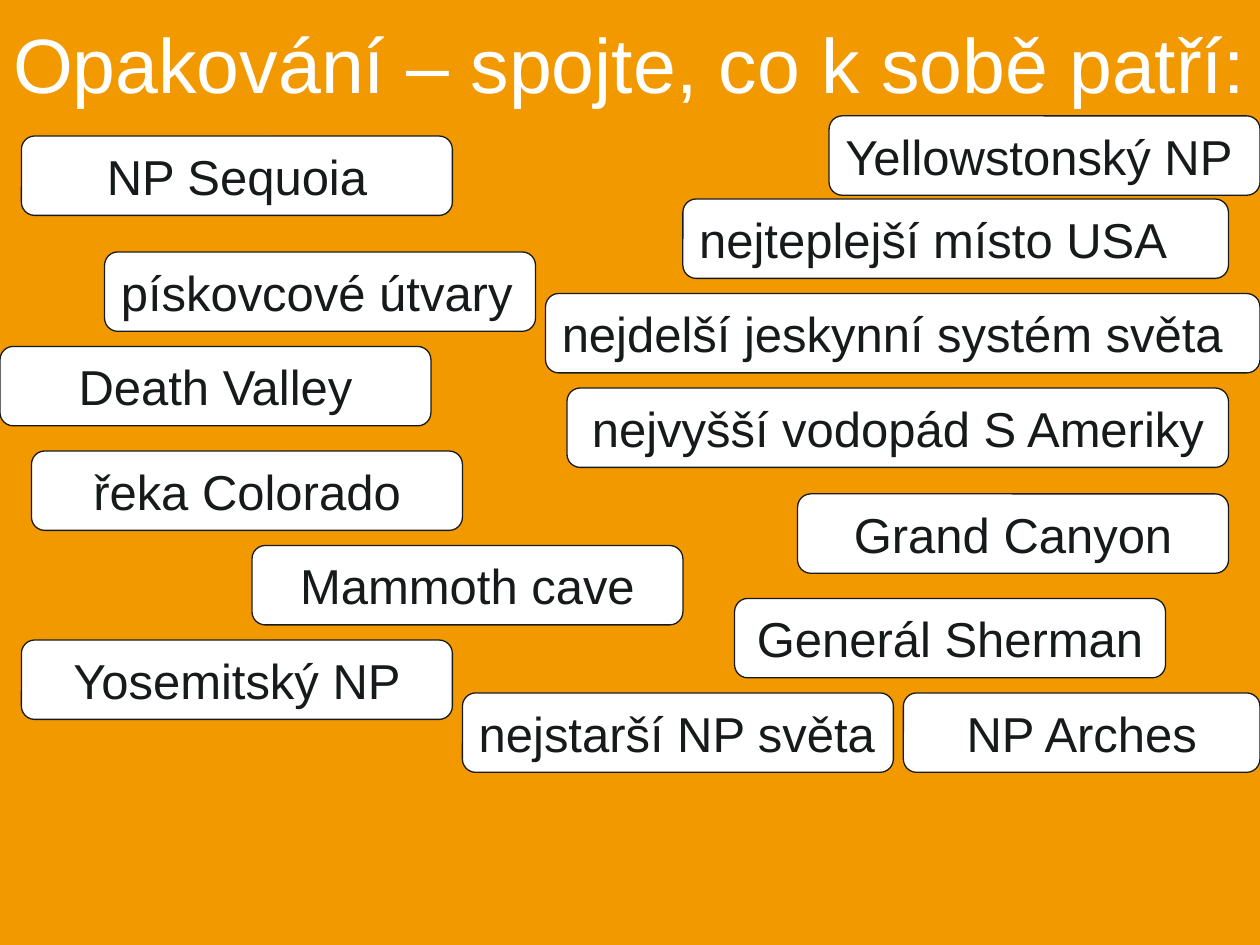
"""Build the matching review slide on national parks of the USA."""
from dataclasses import dataclass

from pptx import Presentation
from pptx.dml.color import RGBColor
from pptx.enum.shapes import MSO_SHAPE
from pptx.enum.text import MSO_ANCHOR, MSO_AUTO_SIZE, PP_ALIGN
from pptx.util import Inches, Pt

LEFT, CENTER = PP_ALIGN.LEFT, PP_ALIGN.CENTER
MIDDLE = MSO_ANCHOR.MIDDLE
GROW, FIXED = MSO_AUTO_SIZE.SHAPE_TO_FIT_TEXT, MSO_AUTO_SIZE.NONE
ROUNDED = MSO_SHAPE.ROUNDED_RECTANGLE


@dataclass(frozen=True)
class Theme:
    """Colours, font and type sizes of the slide."""
    back: RGBColor = RGBColor(0xF3, 0x99, 0x00)
    paper: RGBColor = RGBColor(0xFF, 0xFF, 0xFF)
    ink: RGBColor = RGBColor(0x17, 0x1A, 0x1B)
    font: str = "Arial"
    head: int = 44
    label: int = 28
    line: float = 0.75


def put_text(frame, text, *, font, size, color, align=CENTER, fit=FIXED):
    """Write one formatted paragraph into a text frame."""
    frame.word_wrap = True
    frame.auto_size = fit
    frame.vertical_anchor = MIDDLE
    par = frame.paragraphs[0]
    par.alignment = align
    run = par.add_run()
    run.text = text
    run.font.name = font
    run.font.size = Pt(size)
    run.font.color.rgb = color


class Board:
    """Hold the theme and the current slide."""

    def __init__(self, deck, theme):
        """Add a title-only slide with a plain background."""
        self.theme = theme
        self.slide = deck.slides.add_slide(deck.slide_layouts[5])
        fill = self.slide.background.fill
        fill.solid()
        fill.fore_color.rgb = theme.back

    def title(self, text, width, height):
        """Fill the title placeholder along the top edge."""
        box = self.slide.shapes.title
        box.left, box.top = Inches(0), Inches(0)
        box.width, box.height = Inches(width), Inches(height)
        put_text(box.text_frame, text, font=self.theme.font,
                 size=self.theme.head, color=self.theme.paper)

    def card(self, text, left, top, width=3.42, align=CENTER):
        """Add a rounded card with one term."""
        look = self.theme
        box = self.slide.shapes.add_shape(
            ROUNDED, Inches(left), Inches(top), Inches(width), Inches(0.63))
        box.shadow.inherit = False
        box.fill.solid()
        box.fill.fore_color.rgb = look.paper
        box.line.color.rgb = look.ink
        box.line.width = Pt(look.line)
        put_text(box.text_frame, text, font=look.font, size=look.label,
                 color=look.ink, align=align, fit=GROW)


CARDS = [
    ("nejvyšší vodopád S Ameriky", 4.5, 3.08, 5.25),
    ("Yosemitský NP", 0.17, 5.08),
    ("nejdelší jeskynní systém světa", 4.33, 2.33, 5.67, LEFT),
    ("Mammoth cave", 2, 4.33),
    ("řeka Colorado", 0.25, 3.58),
    ("Grand Canyon", 6.33, 3.92),
    ("nejstarší NP světa", 3.67, 5.5, 3.42, LEFT),
    ("Yellowstonský NP", 6.58, 0.92, 3.42, LEFT),
    ("Death Valley", 0, 2.75),
    ("Generál Sherman", 5.83, 4.75),
    ("NP Sequoia", 0.17, 1.08),
    ("pískovcové útvary", 0.83, 2, 3.42, LEFT),
    ("NP Arches", 7.17, 5.5, 2.83),
    ("nejteplejší místo USA", 5.42, 1.58, 4.33, LEFT),
]


def main():
    """Build and save the deck."""
    deck = Presentation()
    deck.slide_width, deck.slide_height = Inches(10), Inches(7.5)
    board = Board(deck, Theme())
    board.title("Opakování – spojte, co k sobě patří:", 10, 1)
    for card in CARDS:
        board.card(*card)
    deck.save("out.pptx")


if __name__ == "__main__":
    main()
